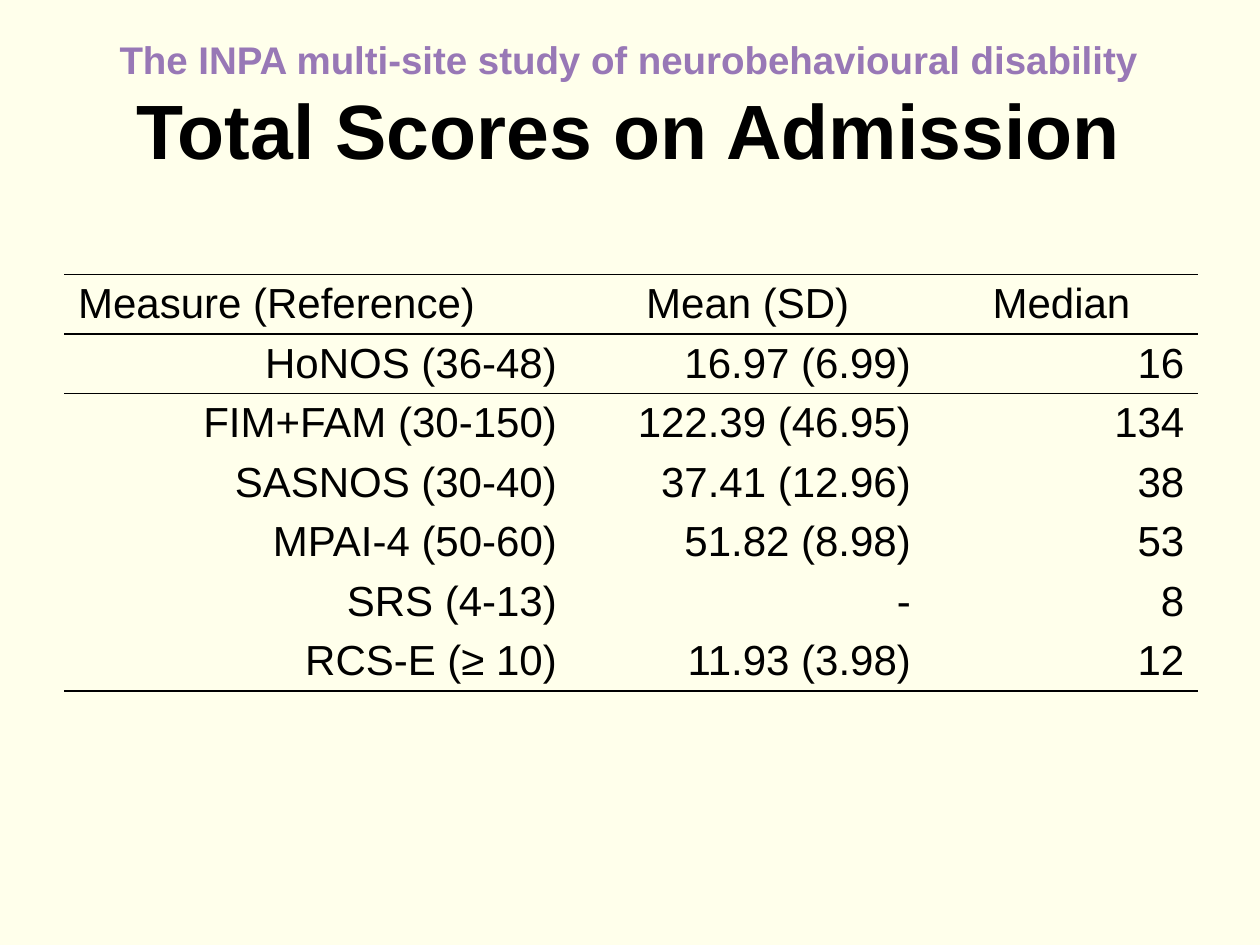
from lxml.etree import SubElement
from pptx import Presentation
from pptx.dml.color import RGBColor
from pptx.enum.text import MSO_ANCHOR, MSO_AUTO_SIZE, PP_ALIGN
from pptx.oxml.ns import qn
from pptx.util import Inches, Pt

INK = "000000"
VIOLET = "9878B6"
CREAM = "FFFFEB"
PLAIN = "{2D5ABB26-0587-4C30-8999-92F81FD0307C}"  # no style, no grid

COLS = [4.02, 2.81, 2.17]
ROWS = [
    ["Measure (Reference)", "Mean (SD)", "Median"],
    ["HoNOS (36-48)", "16.97 (6.99)", "16"],
    ["FIM+FAM (30-150)", "122.39 (46.95)", "134"],
    ["SASNOS (30-40)", "37.41 (12.96)", "38"],
    ["MPAI-4 (50-60)", "51.82 (8.98)", "53"],
    ["SRS (4-13)", "-", "8"],
    ["RCS-E (≥ 10)", "11.93 (3.98)", "12"],
]


def tint(code):
    return RGBColor.from_string(code)


def write(para, text, size=24, color=INK, bold=False, align=PP_ALIGN.CENTER):
    para.alignment = align
    run = para.add_run()
    run.text = text
    run.font.name = "Arial"
    run.font.size = Pt(size)
    run.font.bold = bold
    run.font.color.rgb = tint(color)


def rule(cell, side):
    """Draw a 1 pt line on one side of a cell: T or B."""
    line = SubElement(cell._tc.get_or_add_tcPr(), qn(f"a:ln{side}"), w=str(Pt(1)))
    fill = SubElement(line, qn("a:solidFill"))
    SubElement(fill, qn("a:srgbClr"), val=INK)


def add_title(slide):
    box = slide.shapes.title
    box.left, box.top = Inches(0.49), Inches(0.21)
    box.width, box.height = Inches(9), Inches(1.25)
    frame = box.text_frame
    frame.word_wrap = True
    frame.auto_size = MSO_AUTO_SIZE.NONE
    frame.vertical_anchor = MSO_ANCHOR.MIDDLE
    para = frame.paragraphs[0]
    write(para, "The INPA multi-site study of neurobehavioural disability",
          size=22, color=VIOLET, bold=True)
    para.add_line_break()
    write(para, "Total Scores on Admission", size=44, bold=True)


def add_scores(slide):
    frame = slide.shapes.add_table(
        len(ROWS), len(COLS), Inches(0.51), Inches(2.18),
        Inches(sum(COLS)), Inches(0.41 * len(ROWS)))
    table = frame.table
    table.first_row = table.horz_banding = False
    table._tbl.tblPr.find(qn("a:tableStyleId")).text = PLAIN
    for col, width in zip(table.columns, COLS):
        col.width = Inches(width)

    for r, row in enumerate(ROWS):
        for c, text in enumerate(row):
            cell = table.cell(r, c)
            cell.margin_left = cell.margin_right = Inches(0.11)
            # Lines above and below the header, and under the last row
            if r < 2:
                rule(cell, "T")
            if r in (0, len(ROWS) - 1):
                rule(cell, "B")
            cell.fill.background()
            if r:
                align = PP_ALIGN.RIGHT
            else:
                align = PP_ALIGN.CENTER if c else PP_ALIGN.LEFT
            write(cell.text_frame.paragraphs[0], text, align=align)


def main():
    deck = Presentation()
    deck.slide_width, deck.slide_height = Inches(10), Inches(7.5)
    slide = deck.slides.add_slide(deck.slide_layouts[5])
    back = slide.background.fill
    back.solid()
    back.fore_color.rgb = tint(CREAM)
    add_title(slide)
    add_scores(slide)
    deck.save("out.pptx")


if __name__ == "__main__":
    main()
